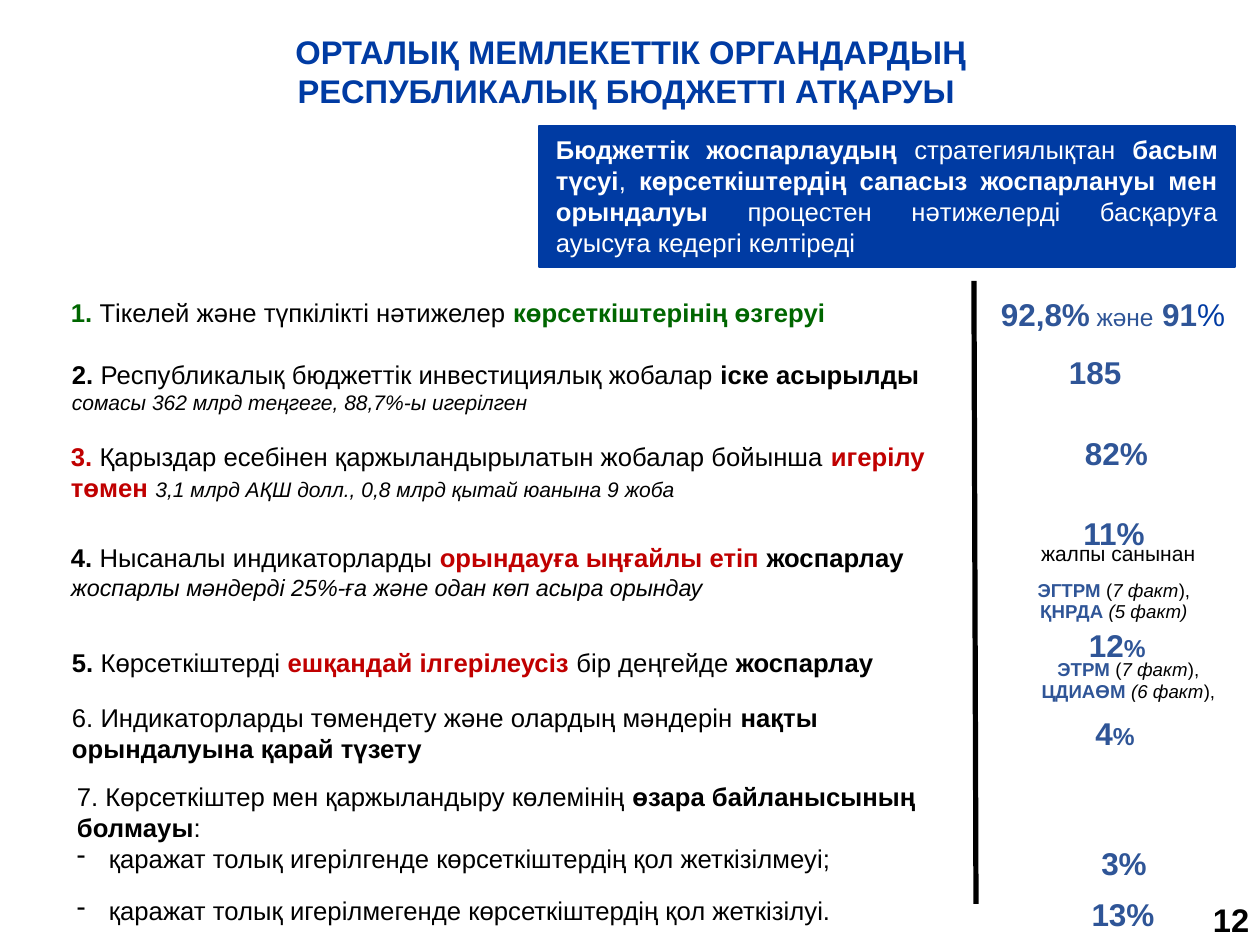
from lxml import etree
from pptx import Presentation
from pptx import util as u
from pptx.dml.color import RGBColor
from pptx.enum import shapes, text
from pptx.oxml.ns import qn

COLORS = {"blue": "003BA3", "steel": "2F5597", "green": "006600",
          "red": "C00000", "black": "000000", "white": "FFFFFF"}
LEFT = text.PP_ALIGN.LEFT
CENTER = text.PP_ALIGN.CENTER
JUSTIFY = text.PP_ALIGN.JUSTIFY
PLAIN = {}
BOLD = dict(bold=True)
RED = dict(bold=True, color="red")
GREEN = dict(bold=True, color="green")
NOTE = dict(size=9, italic=True)
WHITE = dict(color="white")
WHITE_BOLD = dict(color="white", bold=True)
FIGURE = dict(size=13.5, color="steel", bold=True)
SMALL_FIGURE = dict(size=10.5, color="steel", bold=True)
AGENCY = dict(size=8, color="steel", bold=True)
FACT = dict(size=8)
FACT_ITALIC = dict(size=8, italic=True)

ITEMS = [
    (54, 289, 49, [[("1. ", GREEN), ("Тікелей және түпкілікті нәтижелер ", PLAIN),
                    ("көрсеткіштерінің өзгеруі", GREEN)]]),
    (55, 351, 74, [[("2. ", BOLD),
                    ("Республикалық бюджеттік инвестициялық жобалар ", PLAIN),
                    ("іске асырылды", BOLD)],
                   [("сомасы 362 млрд теңгеге, 88,7%-ы игерілген", NOTE)]]),
    (54, 433, 104, [[("3. ", RED),
                     ("Қарыздар есебінен қаржыландырылатын жобалар бойынша ", PLAIN),
                     ("игерілу төмен ", RED),
                     ("3,1 млрд АҚШ долл., 0,8 млрд қытай юанына 9 жоба", NOTE)]]),
    (54, 534, 108, [[("4. ", BOLD), ("Нысаналы индикаторларды ", PLAIN),
                     ("орындауға ыңғайлы етіп ", RED), ("жоспарлау ", BOLD),
                     ("жоспарлы мәндерді 25%-ға және одан көп асыра орындау",
                      dict(size=10, italic=True))]]),
    (55, 639, 49, [[("5. ", BOLD), ("Көрсеткіштерді ", PLAIN),
                    ("ешқандай ілгерілеусіз ", RED), ("бір деңгейде ", PLAIN),
                    ("жоспарлау", BOLD)]]),
    (55, 694, 79, [[("6. Индикаторларды төмендету және олардың мәндерін ", PLAIN),
                    ("нақты орындалуына қарай түзету", BOLD)]]),
]

FIGURES = [
    (984, 287, 267, LEFT, [("92,8%", FIGURE),
                           (" және", dict(size=10.5, color="steel")),
                           (" ", FIGURE), ("91", FIGURE),
                           ("%", dict(size=13.5, color="blue"))]),
    (1052, 345, 106, LEFT, [("185", FIGURE)]),
    (1068, 426, 106, LEFT, [("82%", FIGURE)]),
    (1055, 506, 118, CENTER, [("11%", FIGURE)]),
    (1072, 618, 118, LEFT, [("12", FIGURE), ("%", SMALL_FIGURE)]),
    (1056, 706, 118, CENTER, [("4", FIGURE), ("%", SMALL_FIGURE)]),
    (1065, 836, 118, CENTER, [("3%", FIGURE)]),
    (1064, 887, 118, CENTER, [("13%", FIGURE)]),
]


def px(n):
    return u.Emu(round(n * 914400 / 168))


def rgb(name):
    return RGBColor.from_string(COLORS[name])


def add_run(p, words, size=11, color="black", bold=False, italic=False):
    r = p.add_run()
    r.text = words
    r.font.name = "Arial"
    r.font.size = u.Pt(size)
    r.font.bold = bold
    r.font.italic = italic
    r.font.color.rgb = rgb(color)


def fill_text(sp, paragraphs, align=LEFT, ins=(17, 8, 17, 8), spacing=None):
    tf = sp.text_frame
    tf.word_wrap = True
    tf.auto_size = text.MSO_AUTO_SIZE.NONE
    tf.vertical_anchor = text.MSO_ANCHOR.TOP
    tf.margin_left, tf.margin_top, tf.margin_right, tf.margin_bottom = map(px, ins)
    for i, runs in enumerate(paragraphs):
        p = tf.add_paragraph() if i else tf.paragraphs[0]
        p.alignment = align
        if spacing:
            p.line_spacing = spacing
        for words, style in runs:
            add_run(p, words, **style)
    return tf


def add_text(s, x, y, w, h, paragraphs, **layout):
    sp = s.shapes.add_textbox(px(x), px(y), px(w), px(h))
    return fill_text(sp, paragraphs, **layout)


def add_dash(p):
    pPr = p._p.get_or_add_pPr()
    pPr.set("marL", str(px(32)))
    pPr.set("indent", str(px(-32)))
    etree.SubElement(pPr, qn("a:buChar")).set("char", "-")


def add_title(s):
    sp = s.shapes.title
    sp.left, sp.top, sp.width, sp.height = map(px, (178, 20, 906, 92))
    words = "ОРТАЛЫҚ МЕМЛЕКЕТТІК ОРГАНДАРДЫҢ РЕСПУБЛИКАЛЫҚ БЮДЖЕТТІ АТҚАРУЫ "
    fill_text(sp, [[(words, dict(size=14, color="blue", bold=True))]],
              align=CENTER, ins=(12, 12, 12, 12))


def add_banner(s):
    sp = s.shapes.add_shape(shapes.MSO_SHAPE.RECTANGLE,
                            px(539), px(126), px(696), px(141))
    sp.shadow.inherit = False
    sp.fill.solid()
    sp.fill.fore_color.rgb = rgb("blue")
    sp.line.color.rgb = rgb("blue")
    sp.line.width = u.Pt(0.75)
    fill_text(sp, [[
        ("Бюджеттік жоспарлаудың ", WHITE_BOLD), ("стратегиялықтан ", WHITE),
        ("басым түсуі", WHITE_BOLD), (", ", WHITE),
        ("көрсеткіштердің сапасыз жоспарлануы мен орындалуы ", WHITE_BOLD),
        ("процестен нәтижелерді басқаруға ауысуға кедергі келтіреді", WHITE),
    ]], align=JUSTIFY)


def add_divider(s):
    line = s.shapes.add_connector(shapes.MSO_CONNECTOR.STRAIGHT,
                                  px(974), px(281), px(976), px(904))
    line.line.color.rgb = rgb("black")
    line.line.width = u.Pt(2.25)
    etree.SubElement(line._element.spPr, qn("a:effectLst"))


def add_links_item(s):
    tf = add_text(s, 60, 773, 906, 165, [
        [("7. Көрсеткіштер мен қаржыландыру көлемінің ", PLAIN),
         ("өзара байланысының болмауы", BOLD), (":", PLAIN)],
        [("қаражат толық игерілгенде көрсеткіштердің қол жеткізілмеуі;", PLAIN)],
        [("қаражат толық игерілмегенде көрсеткіштердің қол жеткізілуі.", PLAIN)],
    ])
    tf.paragraphs[2].space_before = u.Pt(9)
    for p in tf.paragraphs[1:]:
        add_dash(p)


def add_agencies(s):
    add_text(s, 995, 533, 252, 42, [[("жалпы санынан ", dict(size=9))]], align=CENTER)
    add_text(s, 995, 570, 238, 64, [
        [("ЭГТРМ ", AGENCY), ("(", FACT), ("7 факт", FACT_ITALIC), ("),", FACT)],
        [("ҚНРДА ", AGENCY), ("(5 факт)", FACT_ITALIC)],
    ], align=CENTER, ins=(12, 12, 12, 12), spacing=0.9)
    add_text(s, 1005, 650, 252, 62, [
        [("ЭТРМ ", AGENCY), ("(", FACT), ("7 факт", FACT_ITALIC), ("), ", FACT)],
        [("ЦДИАӨМ ", AGENCY), ("(6 факт", FACT_ITALIC), ("), ", FACT)],
    ], align=CENTER)


def main():
    prs = Presentation()
    prs.slide_width, prs.slide_height = px(1260), px(945)
    s = prs.slides.add_slide(prs.slide_layouts[5])
    add_title(s)
    add_banner(s)
    add_divider(s)
    for x, y, h, paragraphs in ITEMS:
        add_text(s, x, y, 906, h, paragraphs)
    add_links_item(s)
    for x, y, w, align, runs in FIGURES:
        add_text(s, x, y, w, 55, [runs], align=align)
    add_agencies(s)
    add_text(s, 1196, 892, 64, 53, [[("12", dict(size=14, bold=True))]],
             ins=(17, 8, 0, 0))
    prs.save("out.pptx")


if __name__ == "__main__":
    main()
